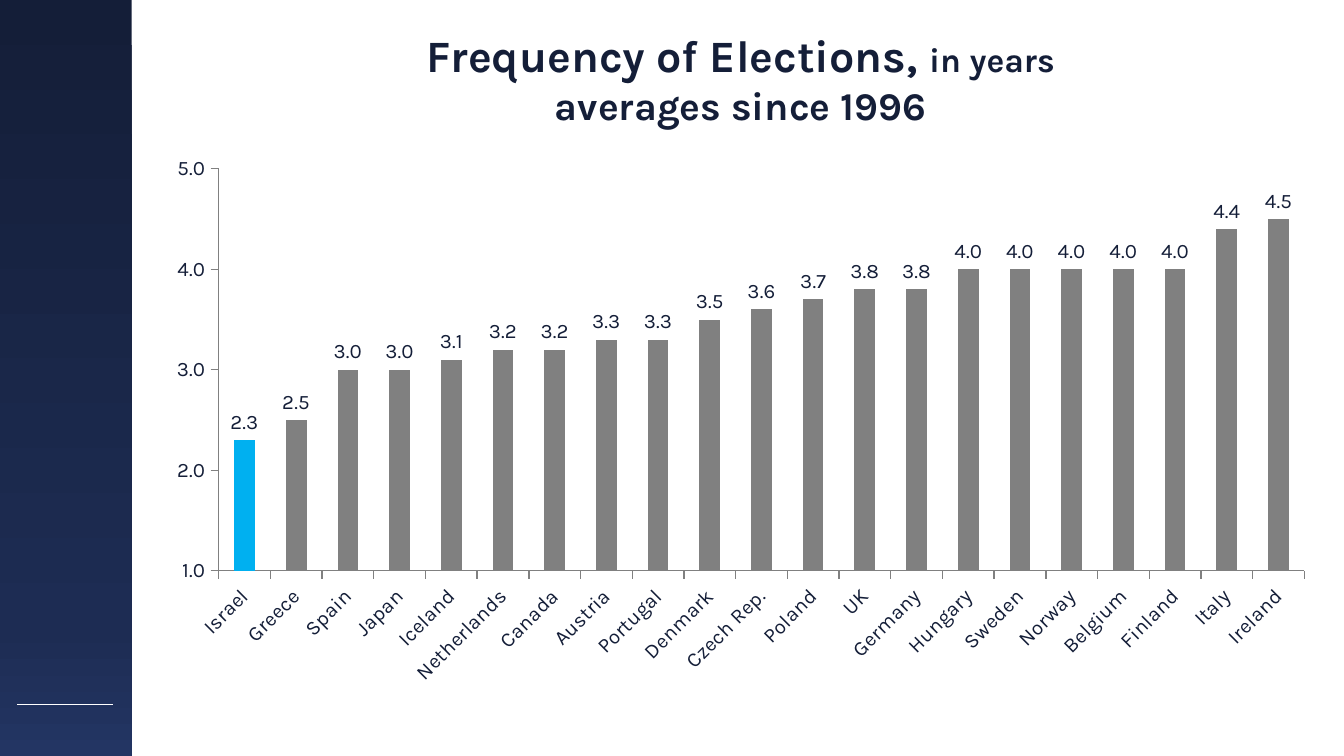
"""Build the slide on the frequency of elections by country."""
import copy

import lxml.etree
import pptx
import pptx.chart.data
import pptx.dml.color
import pptx.enum.chart
import pptx.enum.shapes
import pptx.enum.text
import pptx.oxml.ns
import pptx.util

Inches, Pt = pptx.util.Inches, pptx.util.Pt
RGB = pptx.dml.color.RGBColor.from_string
qn = pptx.oxml.ns.qn

THEME = {
    "font": "Karla",
    "ink": RGB("141E38"),
    "white": RGB("FFFFFF"),
    "bar": RGB("808080"),
    "highlight": RGB("00B0F0"),
    "panel": [(0, RGB("141E38")), (0.83, RGB("1D2C53")), (1, RGB("233563"))],
    "title": Pt(24),
    "unit": Pt(18),
    "subtitle": Pt(21),
    "chart": Pt(11),
}
ELECTIONS = {
    "Israel": 2.3, "Greece": 2.5, "Spain": 3.0, "Japan": 3.0, "Iceland": 3.1,
    "Netherlands": 3.2, "Canada": 3.2, "Austria": 3.3, "Portugal": 3.3,
    "Denmark": 3.5, "Czech Rep.": 3.6, "Poland": 3.7, "UK": 3.8,
    "Germany": 3.8, "Hungary": 4.0, "Sweden": 4.0, "Norway": 4.0,
    "Belgium": 4.0, "Finland": 4.0, "Italy": 4.4, "Ireland": 4.5,
}


def set_attrs(target, **values):
    for name, value in values.items():
        setattr(target, name, value)


def set_font(font, size, bold):
    set_attrs(font, name=THEME["font"], size=size, bold=bold)
    font.color.rgb = THEME["ink"]


prs = pptx.Presentation()
set_attrs(prs, slide_width=Inches(10), slide_height=Inches(10) * 9 // 16)
s = prs.slides.add_slide(prs.slide_layouts[5])

panel = s.shapes.add_shape(
    pptx.enum.shapes.MSO_SHAPE.RECTANGLE, 0, 0, Inches(0.98), prs.slide_height)
panel.shadow.inherit = False
panel.line.fill.background()
panel.fill.gradient()
panel.fill.gradient_angle = 270
stops = panel._element.spPr.find(qn("a:gradFill")).find(qn("a:gsLst"))
stops.insert(1, copy.deepcopy(stops[0]))
for stop, (position, color) in zip(panel.fill.gradient_stops, THEME["panel"]):
    stop.position = position
    stop.color.rgb = color

rule = s.shapes.add_connector(
    pptx.enum.shapes.MSO_CONNECTOR.STRAIGHT,
    Inches(0.84), Inches(5.24), Inches(0.13), Inches(5.24))
rule.line.color.rgb = THEME["white"]
rule.line.width = Pt(0.25)
lxml.etree.SubElement(rule._element.spPr, qn("a:effectLst"))

title = s.shapes.title
set_attrs(title, left=Inches(1.14), top=Inches(0.23),
          width=Inches(8.74), height=Inches(0.7))
tf = title.text_frame
set_attrs(tf, word_wrap=True, auto_size=pptx.enum.text.MSO_AUTO_SIZE.NONE,
          vertical_anchor=pptx.enum.text.MSO_ANCHOR.MIDDLE)
p = tf.paragraphs[0]
p.alignment = pptx.enum.text.PP_ALIGN.CENTER
for text, size in [("Frequency of Elections, ", "title"), ("in years", "unit"),
                   ("averages since 1996", "subtitle")]:
    if size == "subtitle":
        p.add_line_break()
        lxml.etree.SubElement(p._p[-1], qn("a:rPr"), sz="1800")
    r = p.add_run()
    r.text = text
    set_font(r.font, THEME[size], True)

data = pptx.chart.data.CategoryChartData(number_format="0.0")
data.categories = list(ELECTIONS)
data.add_series("Series 1", list(ELECTIONS.values()))
chart = s.shapes.add_chart(
    pptx.enum.chart.XL_CHART_TYPE.COLUMN_CLUSTERED,
    Inches(1.14), Inches(1.08), Inches(8.74), Inches(4.1), data).chart
set_attrs(chart, has_legend=False, has_title=False)
set_font(chart.font, THEME["chart"], False)

for axis in (chart.category_axis, chart.value_axis):
    set_attrs(axis, has_major_gridlines=False,
              major_tick_mark=pptx.enum.chart.XL_TICK_MARK.OUTSIDE,
              minor_tick_mark=pptx.enum.chart.XL_TICK_MARK.NONE)
    axis.format.line.color.rgb = THEME["bar"]
    axis.format.line.width = Pt(0.75)
    set_font(axis.tick_labels.font, THEME["chart"], False)
chart.category_axis._element.find(qn("c:txPr"))[0].set("rot", "-2700000")
set_attrs(chart.value_axis, minimum_scale=1, maximum_scale=5, major_unit=1)
set_attrs(chart.value_axis.tick_labels,
          number_format="0.0", number_format_is_linked=False)

plot = chart.plots[0]
set_attrs(plot, gap_width=150, vary_by_categories=False, has_data_labels=True)
set_attrs(plot.data_labels, show_value=True, number_format="0.0",
          number_format_is_linked=False,
          position=pptx.enum.chart.XL_LABEL_POSITION.OUTSIDE_END)
set_font(plot.data_labels.font, THEME["chart"], False)
series = plot.series[0]
for bar, color in [(series, "bar"), (series.points[0], "highlight")]:
    bar.format.fill.solid()
    bar.format.fill.fore_color.rgb = THEME[color]

prs.save("out.pptx")
